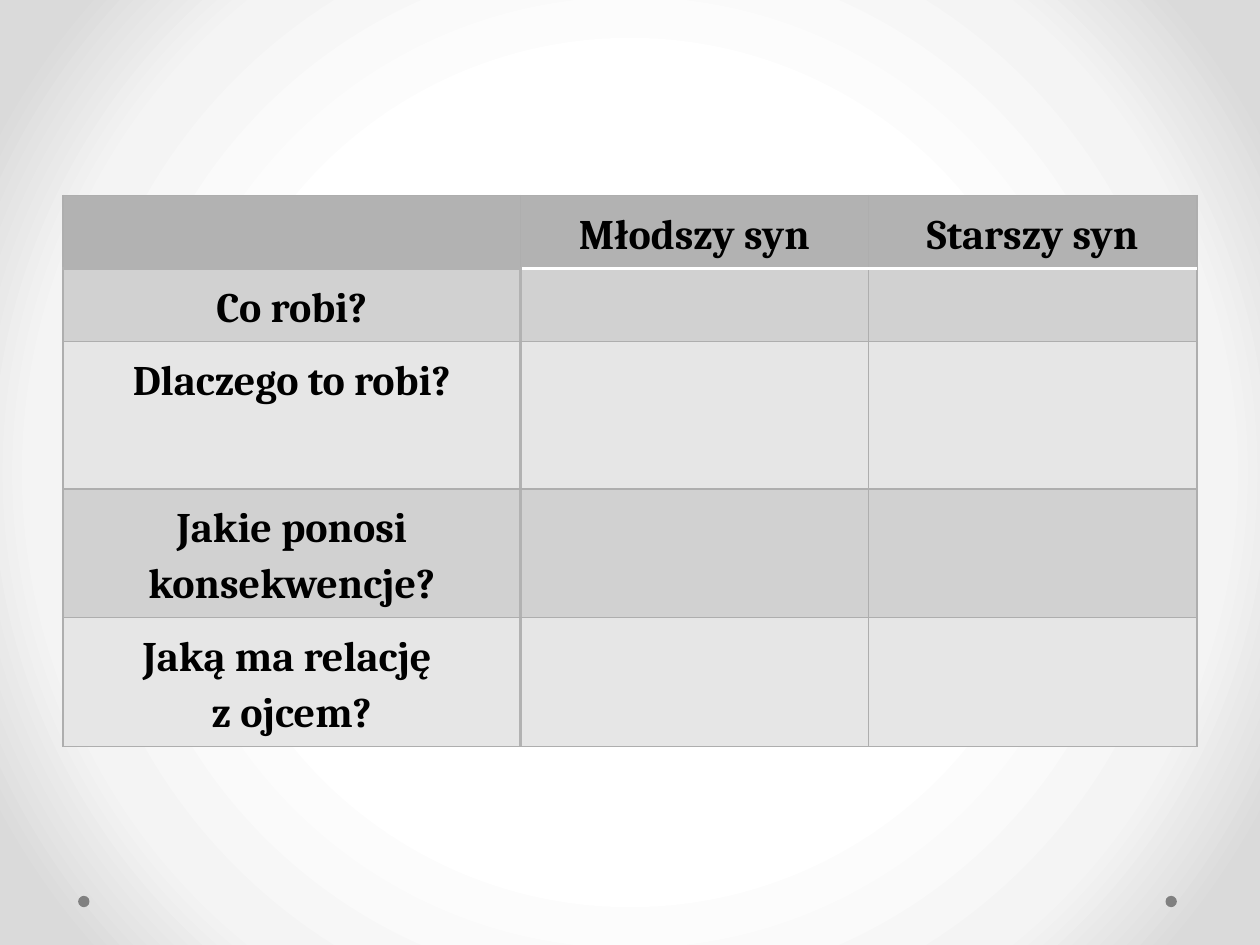
"""Build a slide with a table comparing the younger and the older son."""
from lxml import etree
from pptx import Presentation
from pptx.dml.color import RGBColor
from pptx.enum import shapes, text
from pptx.oxml import parse_xml
from pptx.oxml.ns import nsdecls
from pptx.util import Inches, Pt


def paint(fill, color):
    fill.solid()
    fill.fore_color.rgb = RGBColor.from_string(color)


def add_border(cell, side, color, points):
    cell._tc.get_or_add_tcPr().append(parse_xml(
        f'<a:ln{side} {nsdecls("a")} w="{Pt(points)}"><a:solidFill>'
        f'<a:srgbClr val="{color}"/></a:solidFill></a:ln{side}>'))


prs = Presentation()
prs.slide_width, prs.slide_height = Inches(10), Inches(7.5)
slide = prs.slides.add_slide(prs.slide_layouts[6])

slide.background.fill.gradient()
gradient = slide._element.xpath(".//p:bg//a:gradFill")[0]
stops = "".join(f'<a:gs pos="{percent * 1000}"><a:srgbClr val="{color}"/></a:gs>'
                for percent, color in [(50, "FFFFFF"), (76, "F4F4F4"), (92, "DADADA")])
gradient.getparent().replace(gradient, parse_xml(
    f'<a:gradFill {nsdecls("a")} rotWithShape="1"><a:gsLst>{stops}</a:gsLst>'
    '<a:path path="circle"><a:fillToRect l="50000" t="50000" r="50000" b="50000"/>'
    '</a:path></a:gradFill>'))

for left in (9.25, 0.62):
    dot = slide.shapes.add_shape(shapes.MSO_SHAPE.OVAL, Inches(left), Inches(7.11),
                                 Inches(0.09), Inches(0.09))
    dot.shadow.inherit = False
    paint(dot.fill, "808080")
    dot.line.fill.background()

rows = [
    (0.58, "B2B2B2", ["", "Młodszy syn", "Starszy syn"]),
    (0.58, "D1D1D1", ["Co robi?", "", ""]),
    (1.17, "E6E6E6", ["Dlaczego to robi?", "", ""]),
    (1.02, "D1D1D1", ["Jakie ponosi konsekwencje?", "", ""]),
    (1.02, "E6E6E6", ["Jaką ma relację \vz ojcem?", "", ""]),
]
widths = [3.63, 2.76, 2.61]
sons = slide.shapes.add_table(len(rows), len(widths), Inches(0.5), Inches(1.55),
                              Inches(9), Inches(4.37)).table
for column, width in zip(sons.columns, widths):
    column.width = Inches(width)

margins = {f"margin_{side}": Inches(0.07) for side in ("left", "right", "top", "bottom")}
paragraph_format = {"alignment": text.PP_ALIGN.CENTER, "line_spacing": 1.15,
                    "space_before": Pt(12), "space_after": Pt(12)}
font_format = {"name": "Cambria", "size": Pt(24), "bold": True}
thin, thick, white = ("AEAEAE", 0.75), ("B2B2B2", 2.25), ("FFFFFF", 2.25)

for r, (height, shade, labels) in enumerate(rows):
    sons.rows[r].height = Inches(height)
    for c, label in enumerate(labels):
        cell = sons.cell(r, c)
        borders = {
            "L": thick if r and c == 1 else thin,
            "R": thick if r and c == 0 else thin,
            "T": (white if c else thick) if r == 1 else thin,
            "B": (white if c else thick) if r == 0 else thin,
        }
        for side, (color, points) in borders.items():
            add_border(cell, side, color, points)
        paint(cell.fill, shade)
        if not label:
            continue
        for name, value in margins.items():
            setattr(cell, name, value)
        cell.text = label
        paragraph = cell.text_frame.paragraphs[0]
        for name, value in paragraph_format.items():
            setattr(paragraph, name, value)
        for run in paragraph.runs:
            for name, value in font_format.items():
                setattr(run.font, name, value)
            paint(run.font.fill, "000000")

prs.save("out.pptx")
